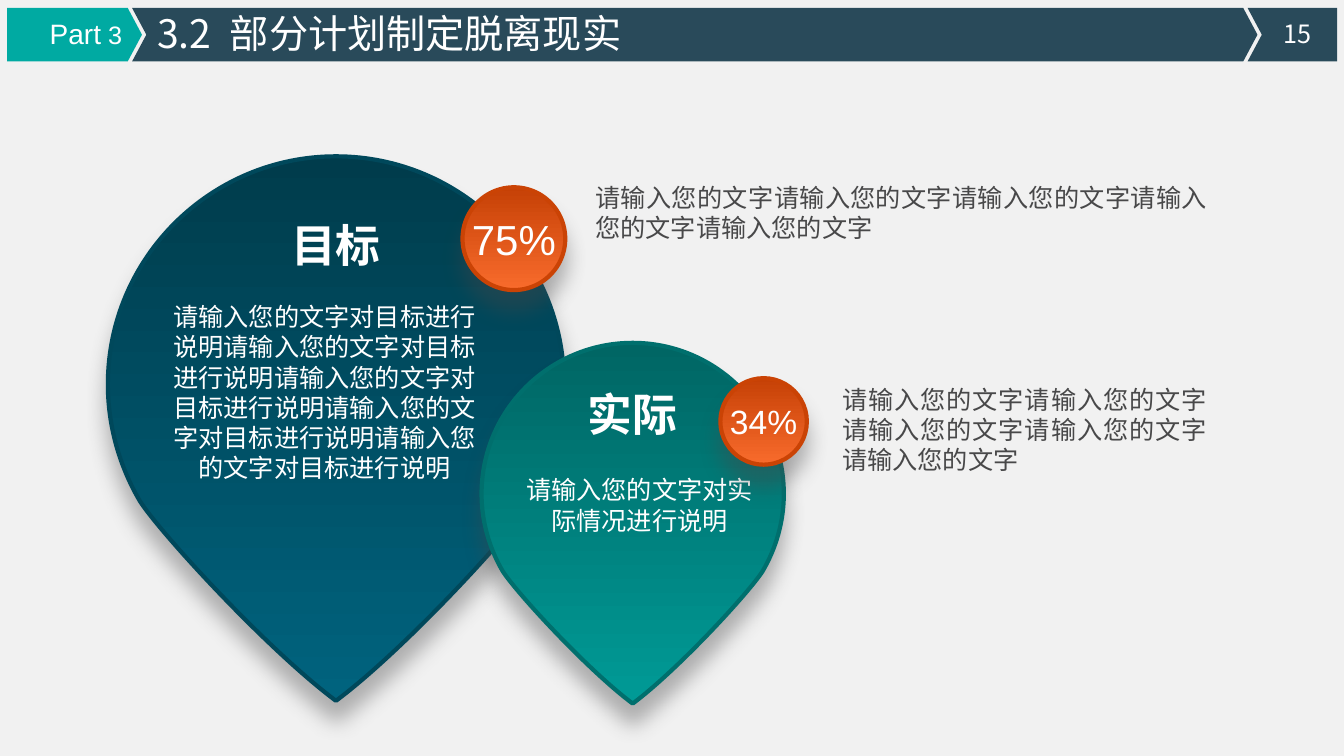
import lxml.etree
import pptx
import pptx.dml.color
import pptx.enum.shapes
import pptx.enum.text
import pptx.oxml
import pptx.oxml.ns
import pptx.util

Cm, Pt = pptx.util.Cm, pptx.util.Pt
qn = pptx.oxml.ns.qn
ALIGN = pptx.enum.text.PP_ALIGN
CJK, LATIN = "Noto Sans CJK SC", "Arial"
LINE_HEIGHT = 1.2

COLORS = {
    "page": "F1F1F1", "teal": "00AAA2", "navy": "294A5A",
    "white": "FFFFFF", "grey": "484849",
    "goal_top": "003C4C", "goal_bottom": "00637E", "goal_edge": "00485B",
    "actual_top": "006664", "actual_bottom": "009A96", "actual_edge": "006F6D",
    "badge_top": "C64106", "badge_bottom": "F86B2C", "badge_edge": "CA4305",
}

# Right half of the pin in percent of its box, as Bezier points
PIN_RIGHT = [(50, 0), (77.5, 0), (100, 18.7), (100, 41.9), (100, 49.6),
             (97.4, 57), (93, 63.3), (88.6, 69.1), (64.9, 90.7), (50, 100)]
PIN_OUTLINE = PIN_RIGHT + [(100 - x, y) for x, y in reversed(PIN_RIGHT[:-1])]


def rgb(name):
    return pptx.dml.color.RGBColor.from_string(COLORS[name])


def write(frame, runs, align, font=CJK, color="white", bold=False):
    """Fill a text frame with one paragraph of (text, size) runs."""
    paragraph = frame.paragraphs[0]
    paragraph.alignment = align
    paragraph.line_spacing = Pt(round(LINE_HEIGHT * max(size for _, size in runs), 1))
    for text, size in runs:
        run = paragraph.add_run()
        run.text = text
        run.font.size, run.font.bold, run.font.name = Pt(size), bold, font
        run.font.color.rgb = rgb(color)
        lxml.etree.SubElement(run.font._element, qn("a:ea")).set("typeface", font)
    return paragraph


def add_text(slide, box, runs, align, **style):
    frame = slide.shapes.add_textbox(*(Cm(length) for length in box)).text_frame
    frame.word_wrap = True
    return write(frame, runs, align, **style)


def add_outline(slide, points):
    (x, y), *rest = [(Cm(x), Cm(y)) for x, y in points]
    builder = slide.shapes.build_freeform(x, y, scale=1.0)
    builder.add_line_segments(rest, close=True)
    outline = builder.convert_to_shape()
    outline.shadow.inherit = False
    return outline


def raise_surface(shape, theme):
    """Vertical gradient, dark edge and soft shadow below."""
    shape.fill.gradient()
    shape.fill.gradient_angle = 270
    for stop, position, part in zip(shape.fill.gradient_stops, (0, 1), ("top", "bottom")):
        stop.position = position
        stop.color.rgb = rgb(f"{theme}_{part}")
    shape.line.color.rgb = rgb(f"{theme}_edge")
    shape.line.width = Pt(3)
    shape.shadow.inherit = False
    effects = shape._element.spPr.find(qn("a:effectLst"))
    effects.append(pptx.oxml.parse_xml(
        f'<a:outerShdw {pptx.oxml.ns.nsdecls("a")} blurRad="{Pt(15)}" dist="{Pt(14)}" '
        f'dir="5400000" algn="t" rotWithShape="0"><a:srgbClr val="{COLORS["grey"]}">'
        '<a:alpha val="40000"/></a:srgbClr></a:outerShdw>'))


def curve_outline(shape):
    """Join each three straight segments into one Bezier curve."""
    segments = list(shape._element.iter(qn("a:lnTo")))
    for start in range(0, len(segments), 3):
        curve = lxml.etree.Element(qn("a:cubicBezTo"))
        segments[start].addprevious(curve)
        for segment in segments[start:start + 3]:
            curve.append(segment[0])
            segment.getparent().remove(segment)


def header(slide, box):
    left, top, width, height = box
    tip = 0.36
    # Bands: start, end, notch depth at the left, tip depth at the right
    for start, end, notch, point, color in [
            (0, 3.4, 0, tip, "teal"),
            (3.15, 31.52, tip, tip, "navy"),
            (31.27, width, tip, 0, "navy")]:
        x1, x2, middle, bottom = left + start, left + end, top + height / 2, top + height
        band = add_outline(slide, [(x1, top), (x2 - point, top), (x2, middle),
                                   (x2 - point, bottom), (x1, bottom), (x1 + notch, middle)])
        band.fill.solid()
        band.fill.fore_color.rgb = rgb(color)
        band.line.fill.background()

    add_text(slide, (left + 31.85, top + 0.13, 1.37, 1.02), [("15", 18)], ALIGN.CENTER)
    title = add_text(slide, (left + 3.53, top - 0.08, 14, 1.45),
                     [("3.2", 28), (" ", 28), ("部分计划制定脱离现实", 28)], ALIGN.LEFT)
    title.runs[1].font._element.set("spc", "700")
    add_text(slide, (left + 0.2, top + 0.1, 2.95, 1.12),
             [("Part", 20), (" 3", 18)], ALIGN.RIGHT, font=LATIN)


def pin(slide, box, theme, heading, heading_top, body, body_box, share, badge_box, share_size):
    left, top, width, height = box
    drop = add_outline(slide, [(left + x * width / 100, top + y * height / 100)
                               for x, y in PIN_OUTLINE])
    curve_outline(drop)
    raise_surface(drop, theme)

    # Heading and explanation
    add_text(slide, (left, top + heading_top, width, 1.63), [(heading, 32)],
             ALIGN.CENTER, bold=True)
    x, y, body_width, body_height = body_box
    add_text(slide, (left + x, top + y, body_width, body_height), [(body, 18)], ALIGN.CENTER)

    # Percentage badge
    x, y, diameter = badge_box
    badge = slide.shapes.add_shape(pptx.enum.shapes.MSO_SHAPE.OVAL, Cm(left + x), Cm(top + y),
                                   Cm(diameter), Cm(diameter))
    raise_surface(badge, "badge")
    frame = badge.text_frame
    frame.margin_left = frame.margin_right = frame.margin_top = frame.margin_bottom = 0
    frame.word_wrap = False
    frame.vertical_anchor = pptx.enum.text.MSO_ANCHOR.MIDDLE
    write(frame, [(share, share_size)], ALIGN.CENTER, font=LATIN)


def notes_column(slide, boxes):
    for box in boxes:
        add_text(slide, box, [("请输入您的文字" * 5, 18)], ALIGN.JUSTIFY, color="grey")


def main():
    deck = pptx.Presentation()
    deck.slide_width, deck.slide_height = Cm(33.88), Cm(19.05)
    slide = deck.slides.add_slide(deck.slide_layouts[6])
    slide.background.fill.solid()
    slide.background.fill.fore_color.rgb = rgb("page")

    header(slide, (0.18, 0.2, 33.53, 1.35))
    pin(slide, (2.72, 3.94, 11.5, 13.72), "goal", "目标", 1.42,
        "请输入您的文字对目标进行说明" * 5, (1.37, 3.53, 8.18, 5.64),
        "75%", (8.94, 0.78, 2.59), 30)
    pin(slide, (12.14, 8.64, 7.62, 9.09), "actual", "实际", 0.99,
        "请输入您的文字对实际情况进行说明", (0.64, 3.2, 6.68, 1.8),
        "34%", (6.02, 0.89, 2.18), 24)
    notes_column(slide, [(14.76, 4.47, 15.93, 1.8), (20.98, 9.55, 9.7, 2.57)])
    deck.save("out.pptx")


if __name__ == "__main__":
    main()
